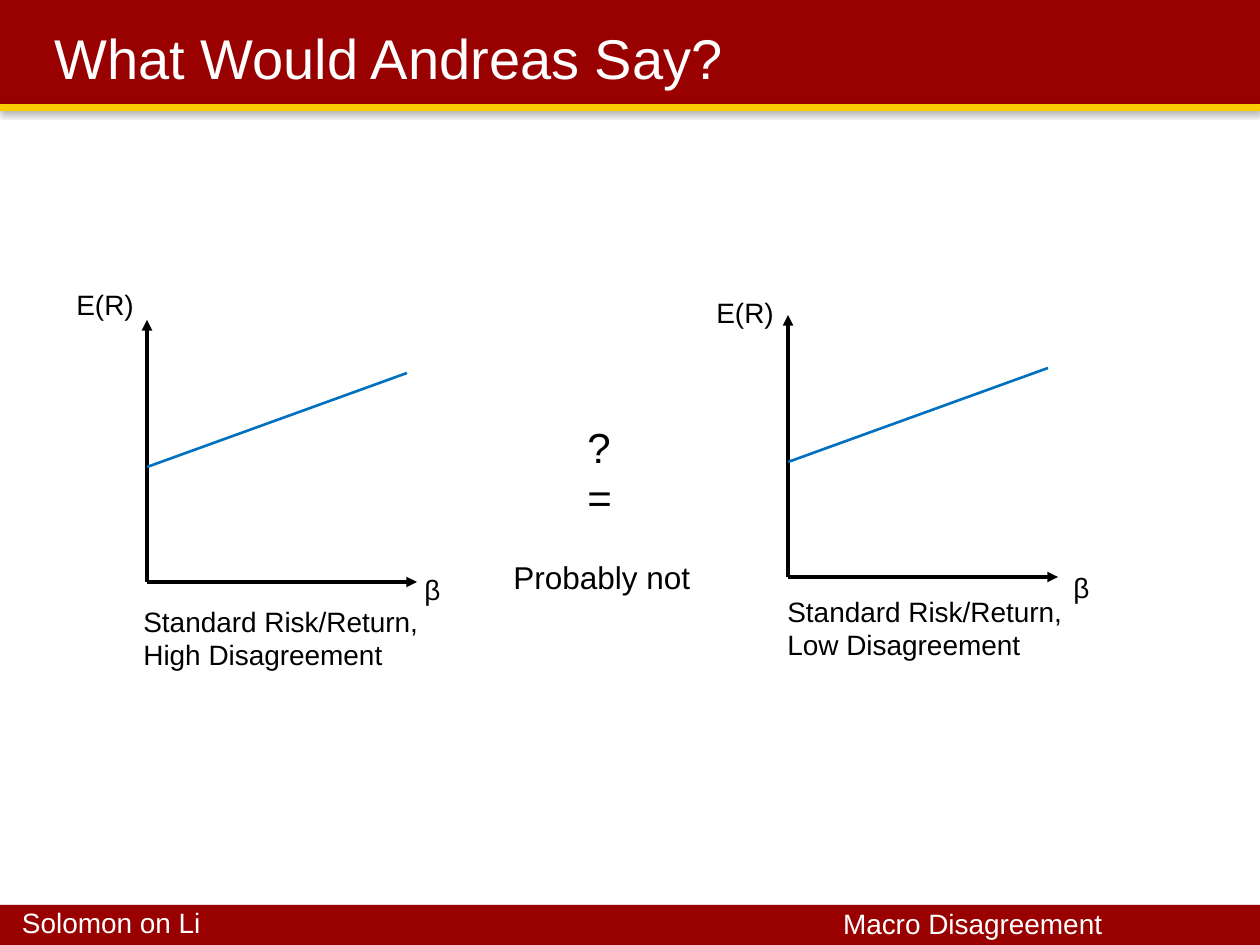
import pptx
import pptx.util
import pptx.dml.color
import pptx.enum.shapes
import pptx.enum.text
import pptx.oxml
import pptx.oxml.ns

PX = 914400 / 126
RED, GOLD, BLUE, BLACK, WHITE = "990000", "FFCC00", "0070C0", "000000", "FFFFFF"


def emu(*lengths):
    return [pptx.util.Emu(round(n * PX)) for n in lengths]


def rgb(value):
    return pptx.dml.color.RGBColor.from_string(value)


def add_xml(parent, tag, **attrs):
    child = pptx.oxml.parse_xml(f"<a:{tag} {pptx.oxml.ns.nsdecls('a')}/>")
    for name, value in attrs.items():
        child.set(name, str(value))
    parent.append(child)
    return child


def write_text(tf, text, size=16, color=BLACK):
    for i, line in enumerate(text.split("\n")):
        p = tf.paragraphs[0] if i == 0 else tf.add_paragraph()
        r = p.add_run()
        r.text = line
        r.font.name = "Arial"
        r.font.size = pptx.util.Pt(size)
        r.font.color.rgb = rgb(color)


class Deck:
    def __init__(self, width, height):
        self.prs = pptx.Presentation()
        self.prs.slide_width, self.prs.slide_height = emu(width, height)
        self.s = self.prs.slides.add_slide(self.prs.slide_layouts[6])

    def bar(self, y, height, color, alpha=35):
        sp = self.s.shapes.add_shape(
            pptx.enum.shapes.MSO_SHAPE.RECTANGLE, *emu(0, y, 1260, height))
        sp.fill.solid()
        sp.fill.fore_color.rgb = rgb(color)
        sp.line.fill.background()
        sp.shadow.inherit = False
        effects = sp._element.spPr.find(pptx.oxml.ns.qn("a:effectLst"))
        shadow = add_xml(effects, "outerShdw", blurRad=39400, dist=22900,
                         dir=5400000, rotWithShape=0)
        tint = add_xml(shadow, "srgbClr", val=BLACK)
        add_xml(tint, "alpha", val=alpha * 1000)

    def text(self, box, text, wrap=True, inset=True, middle=False, **style):
        tf = self.s.shapes.add_textbox(*emu(*box)).text_frame
        tf.word_wrap = wrap
        if not inset:
            tf.margin_left = tf.margin_right = tf.margin_top = tf.margin_bottom = 0
        if middle:
            tf.vertical_anchor = pptx.enum.text.MSO_ANCHOR.MIDDLE
        write_text(tf, text, **style)

    def line(self, x1, y1, x2, y2, color=BLACK, width=2, arrow=True):
        sp = self.s.shapes.add_connector(
            pptx.enum.shapes.MSO_CONNECTOR.STRAIGHT, *emu(x1, y1, x2, y2))
        sp.line.color.rgb = rgb(color)
        sp.line.width = pptx.util.Pt(width)
        if arrow:
            add_xml(sp.line._get_or_add_ln(), "tailEnd", type="triangle")
        add_xml(sp._element.spPr, "effectLst")

    def risk_graph(self, x, y, return_at, beta_at, caption_at, caption):
        self.line(x, y, x, y - 262)
        self.line(x, y, x + 270, y)
        self.line(x, y - 115, x + 260, y - 209, color=BLUE, width=1.5, arrow=False)
        self.text((*return_at, 83, 47), "E(R)", wrap=False)
        self.text((*beta_at, 71, 47), "β")
        self.text((*caption_at, 334, 81), caption)


def main():
    deck = Deck(1260, 945)
    deck.bar(905, 40, RED)
    deck.bar(0, 104, RED)
    deck.bar(104, 7, GOLD, alpha=38)
    deck.text((22, 906, 412, 34), "Solomon on Li", inset=False, color=WHITE)
    deck.text((843, 907, 412, 34), "Macro Disagreement", inset=False, color=WHITE)
    deck.text((42, 21, 1134, 73), "What Would Andreas Say?", middle=True,
              size=32, color=WHITE)
    deck.risk_graph(788, 577, (704, 289), (1061, 564), (775, 588),
                    "Standard Risk/Return,\nLow Disagreement")
    deck.risk_graph(147, 582, (64, 281), (412, 566), (131, 598),
                    "Standard Risk/Return, High Disagreement")
    deck.text((575, 415, 69, 115), "?=", size=24)
    deck.text((501, 552, 218, 50), "Probably not", size=18)
    deck.prs.save("out.pptx")


if __name__ == "__main__":
    main()
